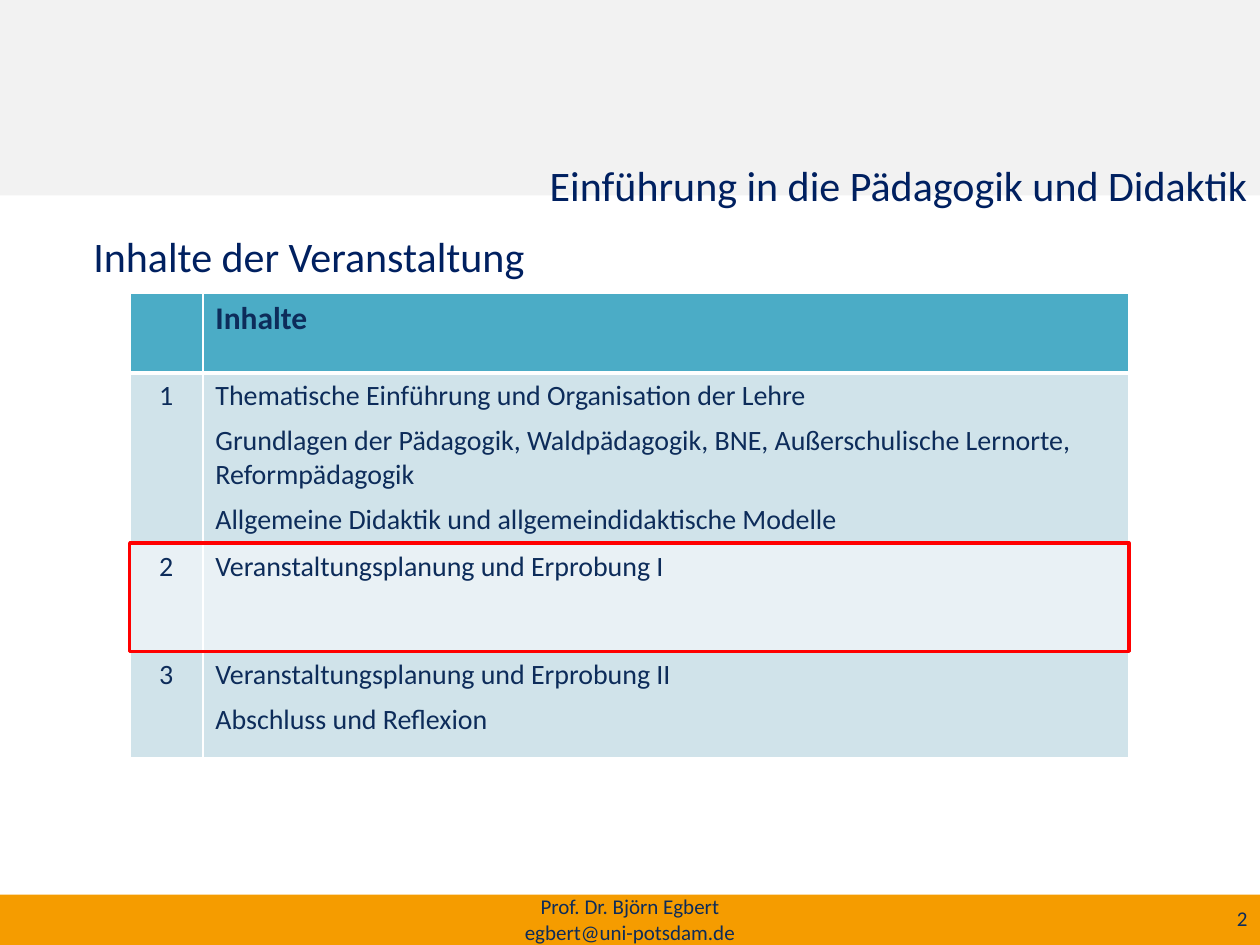
from lxml import etree
from pptx import Presentation
from pptx.dml.color import RGBColor
from pptx.enum import shapes, text
from pptx.oxml import ns
from pptx.util import Inches, Pt

TITLE = "Einführung in die Pädagogik und Didaktik"
HEADING = "Inhalte der Veranstaltung"
FOOTER = "Prof. Dr. Björn Egbert\vegbert@uni-potsdam.de"
PAGE_NUMBER = "2"
ROWS = [
    ("", ["Inhalte"]),
    ("1", [
        "Thematische Einführung und Organisation der Lehre",
        "Grundlagen der Pädagogik, Waldpädagogik, BNE, Außerschulische Lernorte, Reformpädagogik",
        "Allgemeine Didaktik und allgemeindidaktische Modelle",
    ]),
    ("2", ["Veranstaltungsplanung und Erprobung I"]),
    ("3", ["Veranstaltungsplanung und Erprobung II", "Abschluss und Reflexion"]),
]
COLUMN_WIDTHS = [0.58, 7.35]
ROW_HEIGHTS = [0.63, 1.35, 0.86, 0.84]
TABLE_LEFT, TABLE_TOP = 1.03, 2.33
HIGHLIGHTED_ROW = 2

FONT = "Calibri"
NAVY = RGBColor(0x00, 0x20, 0x60)
INK = RGBColor(0x0D, 0x2C, 0x5A)
GRAY = RGBColor(0xF2, 0xF2, 0xF2)
ORANGE = RGBColor(0xF5, 0x9C, 0x00)
TEAL = RGBColor(0x4B, 0xAC, 0xC6)
RED = RGBColor(0xFF, 0x00, 0x00)
WHITE = RGBColor(0xFF, 0xFF, 0xFF)
BANDS = [RGBColor(0xE9, 0xF1, 0xF5), RGBColor(0xD0, 0xE3, 0xEA)]


def place(shape, left, top, width, height):
    shape.left, shape.top = Inches(left), Inches(top)
    shape.width, shape.height = Inches(width), Inches(height)


def format_paragraph(paragraph, size, color, align=text.PP_ALIGN.LEFT, bold=False):
    paragraph.alignment = align
    for run in paragraph.runs:
        run.font.name = FONT
        run.font.size = Pt(size)
        run.font.bold = bold
        run.font.color.rgb = color


def add_rectangle(slide, left, top, width, height, fill=None, line=None):
    shape = slide.shapes.add_shape(
        shapes.MSO_SHAPE.RECTANGLE, Inches(left), Inches(top), Inches(width), Inches(height))
    shape.shadow.inherit = False
    if fill is None:
        shape.fill.background()
    else:
        shape.fill.solid()
        shape.fill.fore_color.rgb = fill
    if line is None:
        shape.line.fill.background()
    else:
        shape.line.color.rgb = line
        shape.line.width = Pt(2)


def fill_placeholder(shape, content, box, align, anchor):
    place(shape, *box)
    frame = shape.text_frame
    frame.text = content
    frame.auto_size = text.MSO_AUTO_SIZE.NONE
    frame.vertical_anchor = anchor
    format_paragraph(frame.paragraphs[0], 24, NAVY, align)


def add_label(slide, content, box, align):
    label = slide.shapes.add_textbox(*map(Inches, box))
    frame = label.text_frame
    frame.word_wrap = True
    frame.vertical_anchor = text.MSO_ANCHOR.MIDDLE
    frame.text = content
    format_paragraph(frame.paragraphs[0], 12, INK, align)


def set_borders(cell, top_width, bottom_width):
    properties = cell._tc.get_or_add_tcPr()
    for side, width in zip("LRTB", (1, 1, top_width, bottom_width)):
        line = etree.SubElement(properties, ns.qn(f"a:ln{side}"), w=str(Pt(width)))
        fill = etree.SubElement(line, ns.qn("a:solidFill"))
        etree.SubElement(fill, ns.qn("a:srgbClr"), val=str(WHITE))


def add_contents_table(slide):
    table = slide.shapes.add_table(
        len(ROWS), len(COLUMN_WIDTHS), Inches(TABLE_LEFT), Inches(TABLE_TOP),
        Inches(sum(COLUMN_WIDTHS)), Inches(sum(ROW_HEIGHTS))).table
    for column, width in zip(table.columns, COLUMN_WIDTHS):
        column.width = Inches(width)
    for index, (number, topics) in enumerate(ROWS):
        header = index == 0
        table.rows[index].height = Inches(ROW_HEIGHTS[index])
        number_cell, topic_cell = table.rows[index].cells
        number_cell.text = number
        topic_cell.text = "\n".join(topics)
        for cell in (number_cell, topic_cell):
            set_borders(cell, 3 if index == 1 else 1, 3 if header else 1)
            cell.fill.solid()
            cell.fill.fore_color.rgb = TEAL if header else BANDS[index % 2]
        format_paragraph(number_cell.text_frame.paragraphs[0], 16, INK, text.PP_ALIGN.CENTER)
        for paragraph in topic_cell.text_frame.paragraphs:
            format_paragraph(paragraph, 18 if header else 16, INK, bold=header)
            if len(topics) > 1:
                paragraph.space_after = Pt(6)


def main():
    presentation = Presentation()
    presentation.slide_width, presentation.slide_height = Inches(10), Inches(7.5)
    slide = presentation.slides.add_slide(presentation.slide_layouts[1])
    title, body = slide.placeholders

    add_rectangle(slide, 0, 0, 10, 1.55, fill=GRAY)
    add_rectangle(slide, 0, 7.1, 10, 0.4, fill=ORANGE)
    for shape in (title, body):
        slide.shapes._spTree.append(shape._element)

    fill_placeholder(title, TITLE, (1.38, 1.15, 8.62, 0.63),
                     text.PP_ALIGN.RIGHT, text.MSO_ANCHOR.MIDDLE)
    fill_placeholder(body, HEADING, (0.64, 1.78, 8.72, 4.5),
                     text.PP_ALIGN.LEFT, text.MSO_ANCHOR.TOP)
    heading = body.text_frame.paragraphs[0]
    properties = heading._p.get_or_add_pPr()
    properties.set("marL", "0")
    properties.set("indent", "0")
    etree.SubElement(properties, ns.qn("a:buNone"))
    heading.space_before = Pt(0)

    add_contents_table(slide)
    add_label(slide, PAGE_NUMBER, (7.6, 7.09, 2.4, 0.4), text.PP_ALIGN.RIGHT)
    add_label(slide, FOOTER, (3.31, 7.09, 3.38, 0.41), text.PP_ALIGN.CENTER)
    highlight_top = TABLE_TOP + sum(ROW_HEIGHTS[:HIGHLIGHTED_ROW])
    add_rectangle(slide, TABLE_LEFT, highlight_top, sum(COLUMN_WIDTHS),
                  ROW_HEIGHTS[HIGHLIGHTED_ROW], line=RED)
    presentation.save("out.pptx")


if __name__ == "__main__":
    main()
